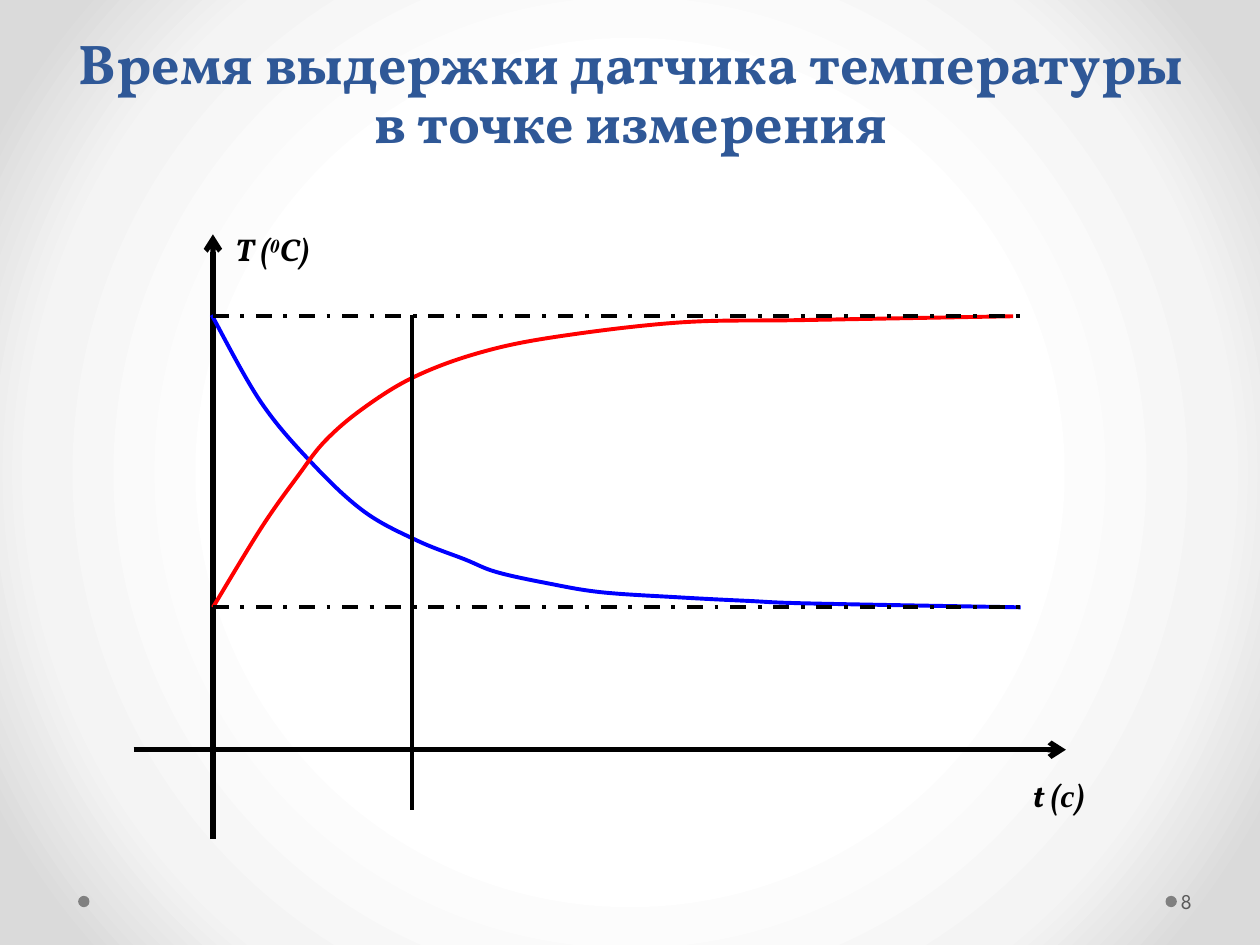
from dataclasses import dataclass

from lxml import etree
from pptx import Presentation
from pptx import oxml
from pptx.dml.color import RGBColor
from pptx.enum import dml, shapes, text
from pptx.oxml import ns
from pptx.util import Inches, Pt


@dataclass(frozen=True)
class Theme:
    serif: str = "Vollkorn"
    symbol: str = "Times New Roman"
    sans: str = "League Spartan"
    title_size: int = 32
    label_size: int = 18
    number_size: int = 12
    title: str = "2F5897"
    ink: str = "000000"
    number: str = "595959"
    dot: str = "808080"
    cooling: str = "0000FF"
    heating: str = "FF0000"
    axis_width: float = 3
    line_width: float = 2.25
    backdrop: tuple = ((50, "FFFFFF"), (76, "F4F4F4"), (92, "DADADA"))


THEME = Theme()
ORIGIN_X, END_X = 1.69, 8.1
HOT_Y, COLD_Y = 2.51, 4.82
COOLING = [
    (1.68, 2.5), (2.07, 3.19), (2.48, 3.68), (2.89, 4.06), (3.31, 4.29),
    (3.69, 4.44), (3.94, 4.54), (4.35, 4.63), (4.77, 4.7), (5.37, 4.74),
    (5.95, 4.77), (6.45, 4.79), (END_X, COLD_Y),
]
HEATING = [
    (ORIGIN_X, COLD_Y), (2.08, 4.18), (2.37, 3.77), (2.58, 3.5), (2.87, 3.25),
    (3.27, 3), (3.77, 2.81), (4.37, 2.68), (5.39, 2.56), (6.4, 2.54),
    (8.04, HOT_Y),
]


def rgb(color):
    return RGBColor.from_string(color)


def paint_backdrop(slide):
    slide.background.fill.gradient()
    stops = "".join(
        f'<a:gs pos="{pos * 1000}"><a:srgbClr val="{color}"/></a:gs>'
        for pos, color in THEME.backdrop
    )
    radial = oxml.parse_xml(
        f'<a:gradFill {ns.nsdecls("a")} rotWithShape="1"><a:gsLst>{stops}</a:gsLst>'
        '<a:path path="circle"><a:fillToRect l="50000" t="50000" r="50000" b="50000"/>'
        "</a:path></a:gradFill>"
    )
    linear = slide.element.xpath(".//p:bgPr/a:gradFill")[0]
    linear.getparent().replace(linear, radial)


def add_text(slide, box, runs, size, color, bold=False, italic=False, wrap=True,
             align=text.PP_ALIGN.LEFT, anchor=text.MSO_ANCHOR.TOP,
             left_inset=0.1, right_inset=0.1, spacing=None):
    frame = slide.shapes.add_textbox(*map(Inches, box)).text_frame
    frame.word_wrap = wrap
    frame.vertical_anchor = anchor
    frame.margin_left, frame.margin_right = Inches(left_inset), Inches(right_inset)
    if not wrap:
        frame.auto_size = text.MSO_AUTO_SIZE.SHAPE_TO_FIT_TEXT
    paragraph = frame.paragraphs[0]
    paragraph.alignment = align
    if spacing:
        paragraph.line_spacing = spacing
    for words, face in runs:
        run = paragraph.add_run()
        run.text = words
        run.font.name, run.font.size = face, Pt(size)
        run.font.bold, run.font.italic = bold, italic
        run.font.color.rgb = rgb(color)


def add_line(slide, start, end, width=THEME.line_width, dash=None, arrow=False):
    line = slide.shapes.add_connector(
        shapes.MSO_CONNECTOR.STRAIGHT, *map(Inches, (*start, *end))
    )
    line.line.color.rgb = rgb(THEME.ink)
    line.line.width = Pt(width)
    if dash:
        line.line.dash_style = dash
    if arrow:
        etree.SubElement(line.line._get_or_add_ln(), ns.qn("a:tailEnd"), type="arrow")
    etree.SubElement(line.element.spPr, ns.qn("a:effectLst"))


def add_curve(slide, points, color):
    start, *rest = [(Inches(x), Inches(y)) for x, y in points]
    builder = slide.shapes.build_freeform(*start)
    builder.add_line_segments(rest, close=False)
    curve = builder.convert_to_shape()
    curve.shadow.inherit = False
    curve.fill.background()
    curve.line.color.rgb = rgb(color)
    curve.line.width = Pt(THEME.line_width)
    smooth_segments(curve)


def smooth_segments(curve):
    knots = [(int(pt.get("x")), int(pt.get("y"))) for pt in curve.element.xpath(".//a:pt")]
    padded = [knots[0], *knots, knots[-1]]
    segments = curve.element.xpath(".//a:lnTo")
    for segment, before, start, end, after in zip(
        segments, padded, padded[1:], padded[2:], padded[3:]
    ):
        leave = [s + (e - b) / 6 for b, s, e in zip(before, start, end)]
        arrive = [e - (a - s) / 6 for s, e, a in zip(start, end, after)]
        bezier = etree.Element(ns.qn("a:cubicBezTo"))
        for x, y in (leave, arrive, end):
            etree.SubElement(bezier, ns.qn("a:pt"), x=str(round(x)), y=str(round(y)))
        segment.getparent().replace(segment, bezier)


def add_dot(slide, left):
    dot = slide.shapes.add_shape(
        shapes.MSO_SHAPE.OVAL, *map(Inches, (left, 7.11, 0.09, 0.09))
    )
    dot.shadow.inherit = False
    dot.fill.solid()
    dot.fill.fore_color.rgb = rgb(THEME.dot)
    dot.line.fill.background()


def add_axis_label(slide, box, before, symbol, after):
    runs = [(before, THEME.serif), (symbol, THEME.symbol), (after, THEME.serif)]
    add_text(slide, box, runs, THEME.label_size, THEME.ink,
             bold=True, italic=True, wrap=False)


def main():
    deck = Presentation()
    deck.slide_width, deck.slide_height = Inches(10), Inches(7.5)
    slide = deck.slides.add_slide(deck.slide_layouts[6])
    paint_backdrop(slide)
    for left in (9.25, 0.62):
        add_dot(slide, left)
    add_text(slide, (0.51, 0.29, 9, 0.99),
             [("Время выдержки датчика температуры в точке измерения", THEME.serif)],
             THEME.title_size, THEME.title, bold=True, spacing=0.87,
             align=text.PP_ALIGN.CENTER, anchor=text.MSO_ANCHOR.BOTTOM)
    add_text(slide, (9.34, 6.95, 0.61, 0.4), [("8", THEME.sans)],
             THEME.number_size, THEME.number, anchor=text.MSO_ANCHOR.MIDDLE,
             left_inset=0.03, right_inset=0.05)
    add_line(slide, (ORIGIN_X, 6.66), (ORIGIN_X, 1.86), THEME.axis_width, arrow=True)
    add_line(slide, (1.06, 5.95), (8.46, 5.95), THEME.axis_width, arrow=True)
    add_curve(slide, COOLING, THEME.cooling)
    add_curve(slide, HEATING, THEME.heating)
    for level in (COLD_Y, HOT_Y):
        add_line(slide, (ORIGIN_X, level), (END_X, level),
                 dash=dml.MSO_LINE.DASH_DOT)
    add_axis_label(slide, (1.77, 1.78, 0.85, 0.4), "T (", "⁰", "C)")
    add_axis_label(slide, (8.1, 6.11, 0.64, 0.4), "t (", "c", ")")
    add_line(slide, (3.27, 2.5), (3.27, 6.43))
    deck.save("out.pptx")


if __name__ == "__main__":
    main()
